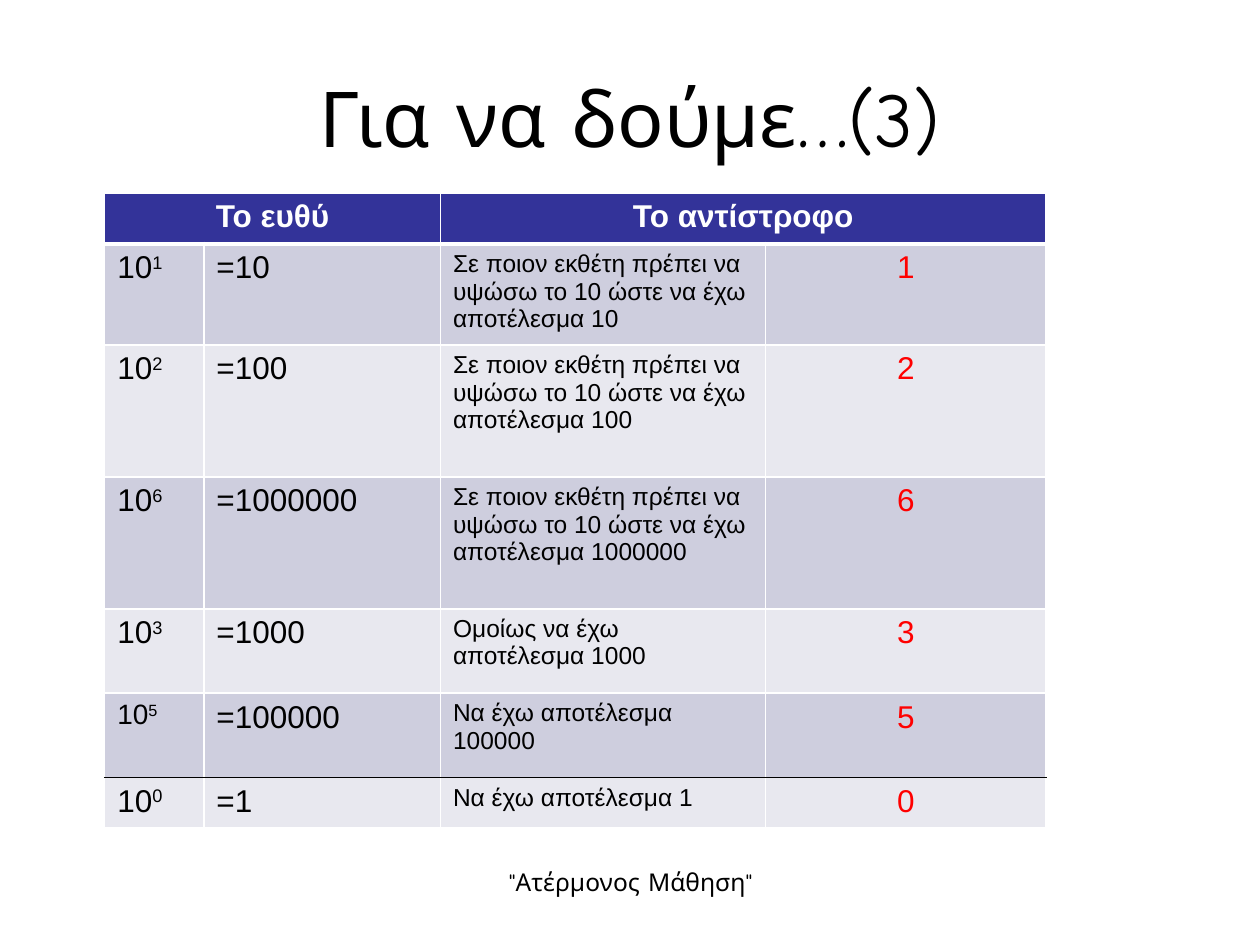
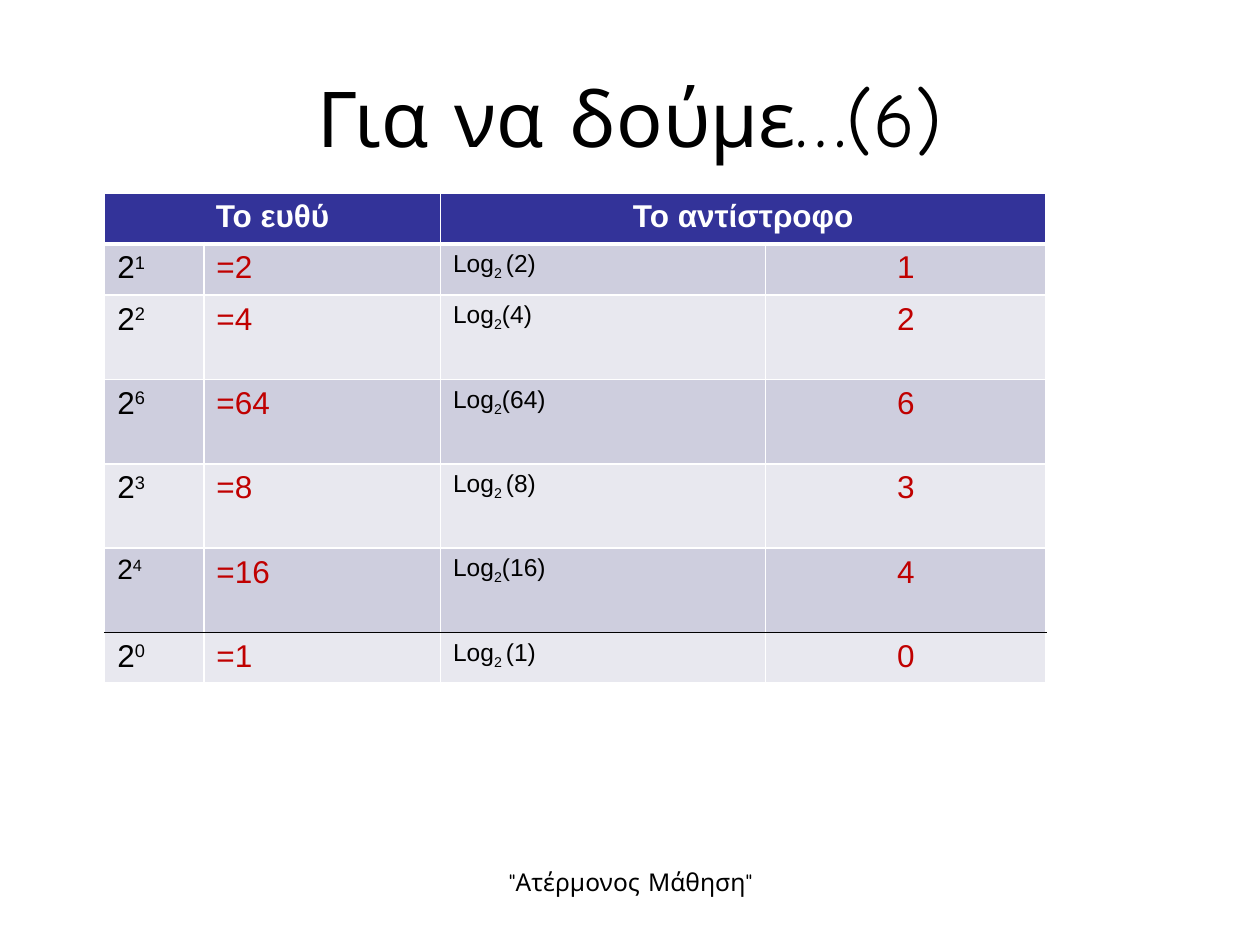
"""Build two slides that set powers beside their inverse questions."""
from dataclasses import dataclass
from lxml.etree import SubElement
from pptx import Presentation
from pptx.dml.color import RGBColor
from pptx.enum.text import MSO_ANCHOR, PP_ALIGN
from pptx.oxml.ns import qn
from pptx.util import Cm, Pt


@dataclass(frozen=True)
class Theme:
    title_font: str = "Comic Neue"
    body_font: str = "Arial"
    title_size: int = 44
    cell_size: int = 18
    small_cell_size: int = 16
    note_size: int = 14
    ink: str = "000000"
    white: str = "FFFFFF"
    header: str = "333399"
    odd_band: str = "CECEDE"
    even_band: str = "E8E8EF"
    bright_red: str = "FF0000"
    dark_red: str = "C00000"


def add_run(p, text, font, size, color, bold=False, baseline=0):
    r = p.add_run()
    r.text = text
    r.font.name = font
    r.font.size = Pt(size)
    r.font.bold = bold
    r.font.color.rgb = RGBColor.from_string(color)
    if baseline:
        r._r.get_or_add_rPr().set("baseline", str(baseline * 1000))


def add_border(cell, side, color, width):
    ln = SubElement(cell._tc.get_or_add_tcPr(), qn(f"a:ln{side}"), w=str(Pt(width)))
    SubElement(SubElement(ln, qn("a:solidFill")), qn("a:srgbClr"), val=color)


T = Theme()
QUESTION = "Σε ποιον εκθέτη πρέπει να υψώσω το 10 ώστε να έχω αποτέλεσμα "
HEADINGS = {0: "Το ευθύ", 2: "Το αντίστροφο"}
COL_WIDTHS = [2.0, 4.77, 6.55, 5.66]
SLIDES = [
    dict(
        title="Για να δούμε…(3)", base=10, result=T.ink, answer=T.bright_red,
        heights=[1.03, 1.92, 2.66, 2.66, 1.7, 1.7, 0.97],
        rows=[
            (1, [(QUESTION + "10", 0)]),
            (2, [(QUESTION + "100", 0)]),
            (6, [(QUESTION + "1000000", 0)]),
            (3, [("Ομοίως να έχω αποτέλεσμα 1000", 0)]),
            (5, [("Να έχω αποτέλεσμα 100000", 0)]),
            (0, [("Να έχω αποτέλεσμα 1", 0)]),
        ],
    ),
    dict(
        title="Για να δούμε…(6)", base=2, result=T.dark_red, answer=T.dark_red,
        heights=[1.03, 1.03, 1.7, 1.7, 1.7, 1.7, 0.97],
        rows=[
            (n, [("Log", 0), (sub, -25), (f"({2 ** n})", 0)])
            for n, sub in [(1, "2 "), (2, "2"), (6, "2"), (3, "2 "), (4, "2"), (0, "2 ")]
        ],
    ),
]

prs = Presentation()
prs.slide_width, prs.slide_height = Cm(25.4), Cm(19.05)

for data in SLIDES:
    s = prs.slides.add_slide(prs.slide_layouts[6])
    for text, size, box, anchor in [
        (data["title"], T.title_size, (1.27, 0.76, 22.86, 3.18), MSO_ANCHOR.MIDDLE),
        ('"Ατέρμονος Μάθηση"', T.note_size, (8.69, 17.35, 8.05, 1.32), MSO_ANCHOR.TOP),
    ]:
        tf = s.shapes.add_textbox(*map(Cm, box)).text_frame
        tf.word_wrap = True
        tf.vertical_anchor = anchor
        p = tf.paragraphs[0]
        p.alignment = PP_ALIGN.CENTER
        add_run(p, text, T.title_font, size, T.ink)

    heights = data["heights"]
    last = len(heights) - 1
    tbl = s.shapes.add_table(
        len(heights), len(COL_WIDTHS), Cm(2.11), Cm(3.89),
        Cm(sum(COL_WIDTHS)), Cm(sum(heights)),
    ).table
    for col, width in zip(tbl.columns, COL_WIDTHS):
        col.width = Cm(width)

    for i, height in enumerate(heights):
        tbl.rows[i].height = Cm(height)
        fill = T.header if i == 0 else T.odd_band if i % 2 else T.even_band
        top = T.ink if i == last else T.white
        bottom = T.ink if i == last - 1 else T.white
        for cell in tbl.rows[i].cells:
            add_border(cell, "L", T.white, 1)
            add_border(cell, "R", T.white, 1)
            add_border(cell, "T", top, 3 if i == 1 else 1)
            add_border(cell, "B", bottom, 3 if i == 0 else 1)
            cell.fill.solid()
            cell.fill.fore_color.rgb = RGBColor.from_string(fill)

    for j, heading in HEADINGS.items():
        cell = tbl.cell(0, j)
        cell.merge(tbl.cell(0, j + 1))
        p = cell.text_frame.paragraphs[0]
        p.alignment = PP_ALIGN.CENTER
        add_run(p, heading, T.body_font, T.cell_size, T.white, bold=True)

    base = data["base"]
    for i, (exponent, question) in enumerate(data["rows"], start=1):
        power_size = T.small_cell_size if i == last - 1 else T.cell_size
        contents = [
            ([(str(base), 0), (str(exponent), 30)], power_size, T.ink),
            ([(f"={base ** exponent}", 0)], T.cell_size, data["result"]),
            (question, T.note_size, T.ink),
            ([(str(exponent), 0)], T.cell_size, data["answer"]),
        ]
        for j, (runs, size, color) in enumerate(contents):
            p = tbl.cell(i, j).text_frame.paragraphs[0]
            if j == 3:
                p.alignment = PP_ALIGN.CENTER
            for text, baseline in runs:
                add_run(p, text, T.body_font, size, color, baseline=baseline)

prs.save("out.pptx")
